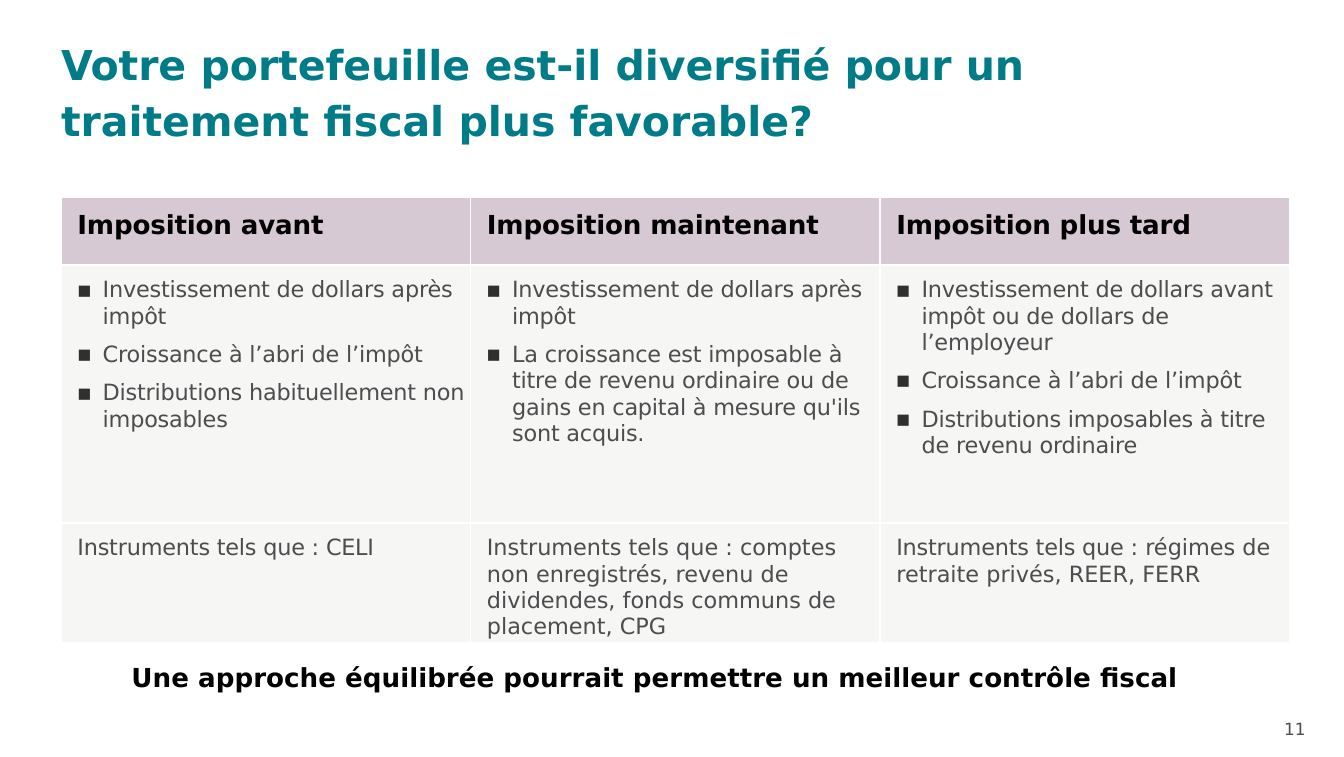
from lxml import etree
from pptx import Presentation
from pptx.dml.color import RGBColor
from pptx.enum.text import MSO_ANCHOR, MSO_AUTO_SIZE, PP_ALIGN
from pptx.oxml.ns import qn
from pptx.util import Pt

LEFT, RIGHT, CENTER = PP_ALIGN.LEFT, PP_ALIGN.RIGHT, PP_ALIGN.CENTER
TOP, MIDDLE = MSO_ANCHOR.TOP, MSO_ANCHOR.MIDDLE
NO_AUTOFIT = MSO_AUTO_SIZE.NONE

TEAL = RGBColor(0x00, 0x7C, 0x89)
BLACK = RGBColor(0x00, 0x00, 0x00)
WHITE = RGBColor(0xFF, 0xFF, 0xFF)
GREY = RGBColor(0x4D, 0x4D, 0x4F)
NUMBER_GREY = RGBColor(0x4D, 0x4D, 0x4D)
BULLET_GREY = RGBColor(0x30, 0x30, 0x30)
MAUVE = RGBColor(0xD7, 0xC9, 0xD3)
PALE = RGBColor(0xF6, 0xF6, 0xF4)

FONT = "DejaVu Sans"
TITLE_FONT = {"name": FONT, "size": Pt(22), "bold": True, "color": TEAL}
HEADING_FONT = {"name": FONT, "size": Pt(14), "bold": True, "color": BLACK}
BODY_FONT = {"name": FONT, "size": Pt(12), "bold": False, "color": GREY}
NUMBER_FONT = {"name": FONT, "size": Pt(9), "bold": False, "color": NUMBER_GREY}

TIGHT, TIGHTER = -10, -20
ROW_HEIGHTS = (36, 138.24, 64.4)
COLUMN_WIDTH = 219.36
TAX_TREATMENTS = [
    ("Imposition avant",
     ["Investissement de dollars après impôt",
      "Croissance à l’abri de l’impôt",
      "Distributions habituellement non imposables"],
     [("Instruments tels que :", TIGHT), (" CELI", TIGHTER)]),
    ("Imposition maintenant",
     ["Investissement de dollars après impôt",
      "La croissance est imposable à titre de revenu ordinaire ou de gains "
      "en capital à mesure qu'ils sont acquis."],
     [("Instruments tels que : comptes non enregistrés, revenu de dividendes, "
       "fonds communs de placement, CPG", 0)]),
    ("Imposition plus tard",
     ["Investissement de dollars avant impôt ou de dollars de l’employeur",
      "Croissance à l’abri de l’impôt",
      "Distributions imposables à titre de revenu ordinaire"],
     [("Instruments tels que : ", TIGHT),
      ("régimes de retraite privés, REER, FERR", 0)]),
]


def apply_format(target, values):
    """Set every attribute named in values on target."""
    for name, value in values.items():
        if name == "color":
            target.color.rgb = value
        else:
            setattr(target, name, value)


def write(paragraph, text, font, tracking=0, **layout):
    """Add one formatted run to a paragraph."""
    apply_format(paragraph, layout)
    run = paragraph.add_run()
    run.text = text
    apply_format(run.font, font)
    if tracking:
        run._r.get_or_add_rPr().set("spc", str(tracking))


def add_title(slide, text):
    """Fill and place the title placeholder."""
    title = slide.shapes.title
    apply_format(title, {"left": Pt(32.7), "top": Pt(17.28),
                         "width": Pt(532), "height": Pt(57.6)})
    apply_format(title.text_frame, {
        "margin_left": 0, "margin_top": 0, "margin_right": 0, "margin_bottom": 0,
        "vertical_anchor": TOP, "word_wrap": True, "auto_size": NO_AUTOFIT})
    write(title.text_frame.paragraphs[0], text, TITLE_FONT,
          alignment=LEFT, line_spacing=Pt(30))


def add_label(slide, bounds, text, font, alignment, **frame_format):
    """Add a wrapped text box holding one line."""
    frame = slide.shapes.add_textbox(*map(Pt, bounds)).text_frame
    apply_format(frame, {"word_wrap": True, **frame_format})
    write(frame.paragraphs[0], text, font, alignment=alignment)


def set_indent(paragraph, margin, hanging=0):
    """Indent a paragraph, with a square bullet if it hangs."""
    properties = paragraph._p.get_or_add_pPr()
    properties.set("marL", str(Pt(margin)))
    properties.set("indent", str(-Pt(hanging)))
    if hanging:
        colour = etree.SubElement(properties, qn("a:buClr"))
        etree.SubElement(colour, qn("a:srgbClr"), val=str(BULLET_GREY))
        etree.SubElement(properties, qn("a:buSzPct"), val="65000")
        etree.SubElement(properties, qn("a:buFont"), typeface=FONT)
        etree.SubElement(properties, qn("a:buChar"), char="■")


def add_borders(cell):
    """Draw a white line on each side of a cell."""
    properties = cell._tc.get_or_add_tcPr()
    for position, side in enumerate(("a:lnL", "a:lnR", "a:lnT", "a:lnB")):
        line = etree.Element(qn(side), w=str(Pt(1)))
        fill = etree.SubElement(line, qn("a:solidFill"))
        etree.SubElement(fill, qn("a:srgbClr"), val=str(WHITE))
        properties.insert(position, line)


def prepare_cell(cell, fill):
    """Set margins, fill and borders of a cell."""
    apply_format(cell, {"margin_left": 0, "margin_top": Pt(6.5), "margin_right": 0,
                        "margin_bottom": 0, "vertical_anchor": TOP})
    cell.fill.solid()
    cell.fill.fore_color.rgb = fill
    add_borders(cell)


def fill_plain(cell, pieces, font, fill):
    """Write one paragraph of tracked pieces into a cell."""
    prepare_cell(cell, fill)
    paragraph = cell.text_frame.paragraphs[0]
    set_indent(paragraph, 8.8)
    for text, tracking in pieces:
        write(paragraph, text, font, tracking, alignment=LEFT)


def fill_bullets(cell, points):
    """Write a bulleted list into a cell."""
    prepare_cell(cell, PALE)
    frame = cell.text_frame
    for index, point in enumerate(points):
        paragraph = frame.add_paragraph() if index else frame.paragraphs[0]
        set_indent(paragraph, 22.3, 13.5)
        write(paragraph, point, BODY_FONT, TIGHT, alignment=LEFT,
              space_before=Pt(6.5 if index else 0))


def add_tax_table(slide):
    """Add the table with one column for each tax treatment."""
    count = len(TAX_TREATMENTS)
    table = slide.shapes.add_table(
        len(ROW_HEIGHTS), count, Pt(32.7), Pt(105.84),
        Pt(COLUMN_WIDTH * count), Pt(sum(ROW_HEIGHTS))).table
    apply_format(table, {"first_row": True, "horz_banding": False})
    for row, height in zip(table.rows, ROW_HEIGHTS):
        row.height = Pt(height)
    for column, (heading, points, instruments) in enumerate(TAX_TREATMENTS):
        table.columns[column].width = Pt(COLUMN_WIDTH)
        fill_plain(table.cell(0, column), [(heading, TIGHT)], HEADING_FONT, MAUVE)
        fill_bullets(table.cell(1, column), points)
        fill_plain(table.cell(2, column), instruments, BODY_FONT, PALE)


def main():
    """Build the slide and save it."""
    presentation = Presentation()
    apply_format(presentation, {"slide_width": Pt(720), "slide_height": Pt(405.36)})
    slide = presentation.slides.add_slide(presentation.slide_layouts[5])
    add_title(slide, "Votre portefeuille est-il diversifié pour un traitement "
                     "fiscal plus favorable?")
    add_tax_table(slide)
    add_label(slide, (54.72, 350.64, 592.56, 24.48),
              "Une approche équilibrée pourrait permettre un meilleur contrôle fiscal",
              HEADING_FONT, CENTER)
    add_label(slide, (531.36, 384.48, 168, 11.52), "11", NUMBER_FONT, RIGHT,
              margin_left=0, margin_right=0, vertical_anchor=MIDDLE)
    presentation.save("out.pptx")


if __name__ == "__main__":
    main()
